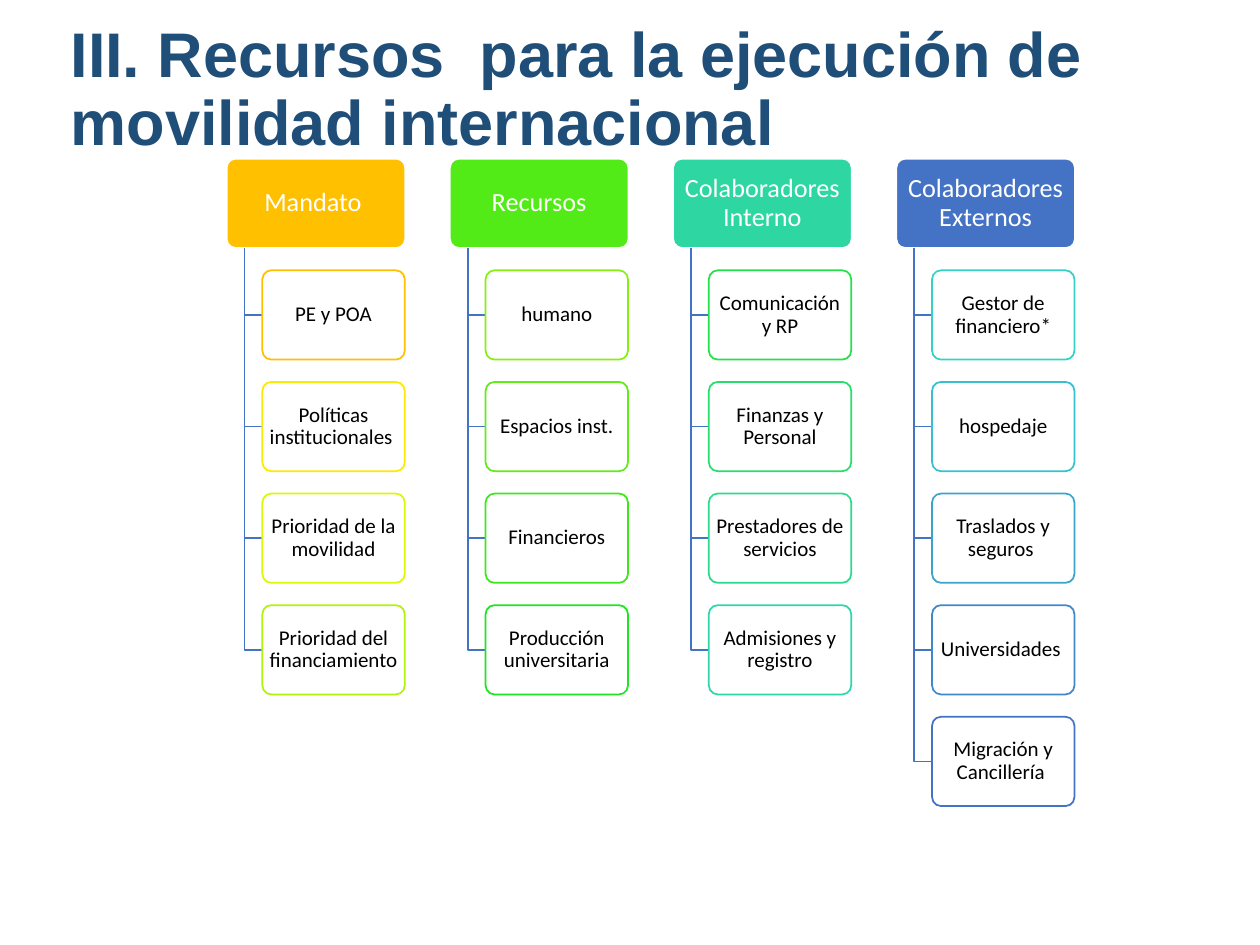
from dataclasses import dataclass

from lxml.etree import SubElement
from pptx import Presentation
from pptx.dml.color import RGBColor
from pptx.enum.shapes import MSO_SHAPE as Shape
from pptx.enum.text import MSO_ANCHOR as Anchor, MSO_AUTO_SIZE as AutoSize, PP_ALIGN as Align
from pptx.oxml.ns import qn
from pptx.util import Cm, Pt


@dataclass(frozen=True)
class Theme:
    """Colours, fonts and type sizes of the slide."""
    title_font: str = "Arial"
    body_font: str = "Calibri"
    title_size: int = 36
    header_size: int = 15
    item_size: int = 12
    title: str = "1F4E79"
    branch: str = "4472C4"
    light: str = "FFFFFF"
    dark: str = "000000"
    line_width: int = 1
    line_spacing: float = 0.9


COLUMNS = [
    ("Mandato ", "FFC000", [
        ("PE y POA", "FFC000"),
        ("Políticas institucionales ", "FBEB04"),
        ("Prioridad de la movilidad", "DCF709"),
        ("Prioridad del financiamiento", "B0F40D"),
    ]),
    ("Recursos", "53EB17", [
        ("humano", "86F011"),
        ("Espacios inst.", "60EC16"),
        ("Financieros", "3CE81A"),
        ("Producción universitaria", "1EE522"),
    ]),
    ("Colaboradores Interno", "2ED7A1", [
        ("Comunicación y RP", "23E148"),
        ("Finanzas y Personal", "27DD6C"),
        ("Prestadores de servicios", "2BDA8C"),
        ("Admisiones y registro", "2FD6AA"),
    ]),
    ("Colaboradores Externos", "4472C4", [
        ("Gestor de financiero*", "33D2C5"),
        ("hospedaje", "38C0CF"),
        ("Traslados y seguros ", "3CA3CB"),
        ("Universidades ", "4089C8"),
        ("Migración y Cancillería ", "4472C4"),
    ]),
]

LEFT, TOP = 4.57, 3.2
COLUMN_PITCH, ROW_PITCH = 4.5, 2.25
HEADER_WIDTH, ITEM_WIDTH, BOX_HEIGHT = 3.6, 2.87, 1.8
TRUNK_INDENT, ITEM_INDENT = 0.36, 0.72


class SlideBuilder:
    """Adds styled elements to the current slide."""

    def __init__(self, slide, theme):
        self.slide = slide
        self.theme = theme

    def format_text(self, paragraph, font_name, size, color, align):
        """Style a paragraph."""
        paragraph.alignment = align
        paragraph.line_spacing = self.theme.line_spacing
        font = paragraph.font
        font.name, font.size = font_name, Pt(size)
        font.color.rgb = RGBColor.from_string(color)

    def outline(self, shape, color):
        """Give a shape a thin line and no shadow."""
        shape.shadow.inherit = False
        shape.line.color.rgb = RGBColor.from_string(color)
        shape.line.width = Pt(self.theme.line_width)

    def title(self, text, left, top, width, height):
        """Place and fill the title placeholder."""
        title = self.slide.shapes.title
        title.left, title.top, title.width, title.height = map(Cm, (left, top, width, height))
        frame = title.text_frame
        frame.text = text
        frame.auto_size = AutoSize.NONE
        frame.vertical_anchor = Anchor.MIDDLE
        paragraph = frame.paragraphs[0]
        self.format_text(paragraph, self.theme.title_font, self.theme.title_size,
                         self.theme.title, Align.LEFT)
        paragraph.font.bold = True

    def box(self, text, left, top, width, fill, line, size, color, opacity=100):
        """Add a rounded box with centred text."""
        shape = self.slide.shapes.add_shape(
            Shape.ROUNDED_RECTANGLE, Cm(left), Cm(top), Cm(width), Cm(BOX_HEIGHT))
        shape.adjustments[0] = 0.1
        shape.fill.solid()
        shape.fill.fore_color.rgb = RGBColor.from_string(fill)
        if opacity < 100:
            fill_color = shape.element.spPr.find(f"{qn('a:solidFill')}/{qn('a:srgbClr')}")
            SubElement(fill_color, qn("a:alpha")).set("val", str(opacity * 1000))
        self.outline(shape, line)
        frame = shape.text_frame
        frame.word_wrap = True
        frame.vertical_anchor = Anchor.MIDDLE
        frame.margin_left = frame.margin_right = Cm(0.07)
        frame.margin_top = frame.margin_bottom = Cm(0.05)
        frame.text = text
        self.format_text(frame.paragraphs[0], self.theme.body_font, size, color, Align.CENTER)

    def branch(self, left, top, right, bottom):
        """Add an L-shaped line that goes down and then right."""
        builder = self.slide.shapes.build_freeform(Cm(left), Cm(top))
        builder.add_line_segments(
            [(Cm(left), Cm(bottom)), (Cm(right), Cm(bottom))], close=False)
        shape = builder.convert_to_shape()
        shape.fill.background()
        self.outline(shape, self.theme.branch)

    def column(self, left, heading, fill, items):
        """Add a header box with its items hanging below."""
        theme = self.theme
        self.box(heading, left, TOP, HEADER_WIDTH, fill, theme.light,
                 theme.header_size, theme.light)
        item_left = left + ITEM_INDENT
        for row, (text, line) in enumerate(items, start=1):
            top = TOP + row * ROW_PITCH
            self.branch(left + TRUNK_INDENT, TOP + BOX_HEIGHT, item_left, top + BOX_HEIGHT / 2)
            self.box(text, item_left, top, ITEM_WIDTH, theme.light, line,
                     theme.item_size, theme.dark, opacity=90)


def main():
    """Build and save the presentation."""
    presentation = Presentation()
    presentation.slide_width, presentation.slide_height = Cm(25.4), Cm(19.05)
    slide = presentation.slides.add_slide(presentation.slide_layouts[5])
    builder = SlideBuilder(slide, Theme())
    builder.title("III. Recursos  para la ejecución de movilidad internacional",
                  1.17, 0, 21.9, 3.68)
    for index, (heading, fill, items) in enumerate(COLUMNS):
        builder.column(LEFT + index * COLUMN_PITCH, heading, fill, items)
    presentation.save("out.pptx")


if __name__ == "__main__":
    main()
